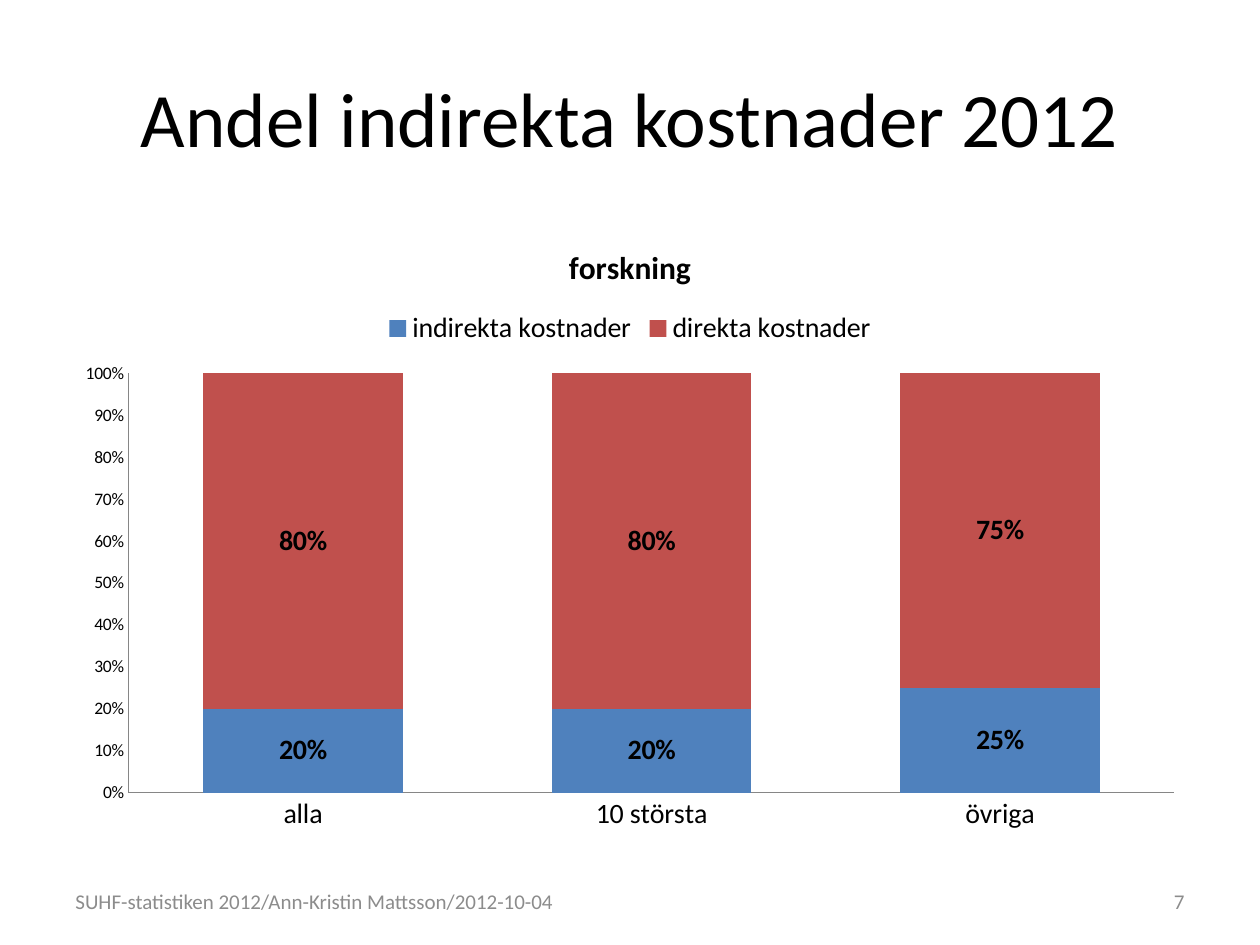
from pptx import Presentation
from pptx.chart.data import CategoryChartData
from pptx.dml.color import RGBColor
from pptx.enum.chart import XL_CHART_TYPE as ChartType
from pptx.enum.chart import XL_LABEL_POSITION as LabelPosition
from pptx.enum.chart import XL_LEGEND_POSITION as LegendPosition
from pptx.enum.chart import XL_TICK_MARK as TickMark
from pptx.enum.text import MSO_ANCHOR as Anchor
from pptx.enum.text import PP_ALIGN as Align
from pptx.util import Pt

FONT = "Calibri"
BLACK, GREY, AXIS = "000000", "8C8C8C", "868686"
CATEGORIES = ["alla", "10 största", "övriga"]
SERIES = [
    ("indirekta kostnader", [0.2, 0.2, 0.25], "4F81BD"),
    ("direkta kostnader", [0.8, 0.8, 0.75], "C0504D"),
]


def color(value):
    return RGBColor.from_string(value)


def style_font(font, size, shade=BLACK, bold=False):
    font.name = FONT
    font.size = Pt(size)
    font.bold = bold
    font.color.rgb = color(shade)


def place(shape, box):
    shape.left, shape.top, shape.width, shape.height = [Pt(length) for length in box]


def write(shape, text, size, shade, align):
    frame = shape.text_frame
    frame.word_wrap = True
    frame.vertical_anchor = Anchor.MIDDLE
    para = frame.paragraphs[0]
    para.alignment = align
    span = para.add_run()
    span.text = text
    style_font(span.font, size, shade)


def add_title(page, box, text):
    title = page.shapes.title
    place(title, box)
    write(title, text, 44, BLACK, Align.CENTER)


def add_footer(page, box, source, number):
    left, top, width, height = box
    parts = [(source, left, 290, Align.LEFT),
             (number, left + width - 103, 103, Align.RIGHT)]
    for text, start, span_width, align in parts:
        label = page.shapes.add_textbox(Pt(start), Pt(top), Pt(span_width), Pt(height))
        write(label, text, 12, GREY, align)


def style_axis(axis, size):
    axis.major_tick_mark = axis.minor_tick_mark = TickMark.NONE
    axis.has_major_gridlines = False
    axis.format.line.color.rgb = color(AXIS)
    axis.format.line.width = Pt(0.75)
    style_font(axis.tick_labels.font, size)


def style_series(series, shade):
    series.format.fill.solid()
    series.format.fill.fore_color.rgb = color(shade)
    labels = series.data_labels
    labels.show_value = True
    labels.number_format = "0%"
    labels.number_format_is_linked = False
    labels.position = LabelPosition.CENTER
    style_font(labels.font, 16, bold=True)


def add_cost_chart(page, box, title):
    data = CategoryChartData(number_format="0%")
    data.categories = CATEGORIES
    for name, values, shade in SERIES:
        data.add_series(name, values)
    chart = page.shapes.add_chart(
        ChartType.COLUMN_STACKED, *[Pt(length) for length in box], data).chart
    style_font(chart.font, 10)

    chart.has_title = True
    span = chart.chart_title.text_frame.paragraphs[0].add_run()
    span.text = title
    style_font(span.font, 18, bold=True)
    chart.chart_title.include_in_layout = False

    chart.has_legend = True
    chart.legend.position = LegendPosition.TOP
    chart.legend.include_in_layout = False
    style_font(chart.legend.font, 16)

    style_axis(chart.category_axis, 16)
    value_axis = chart.value_axis
    style_axis(value_axis, 10)
    value_axis.minimum_scale, value_axis.maximum_scale = 0, 1
    value_axis.major_unit = 0.1
    value_axis.tick_labels.number_format = "0%"
    value_axis.tick_labels.number_format_is_linked = False

    plot = chart.plots[0]
    plot.gap_width, plot.overlap = 75, 100
    plot.vary_by_categories = False
    for series, (name, values, shade) in zip(plot.series, SERIES):
        style_series(series, shade)


def main():
    deck = Presentation()
    deck.slide_width, deck.slide_height = Pt(720), Pt(540)
    page = deck.slides.add_slide(deck.slide_layouts[5])
    add_title(page, (36, 21.6, 648, 90), "Andel indirekta kostnader 2012")
    add_footer(page, (36, 500.5, 648, 28.8),
               "SUHF-statistiken 2012/Ann-Kristin Mattsson/2012-10-04", "7")
    add_cost_chart(page, (36, 126, 648, 356.4), "forskning")
    deck.save("out.pptx")


if __name__ == "__main__":
    main()
